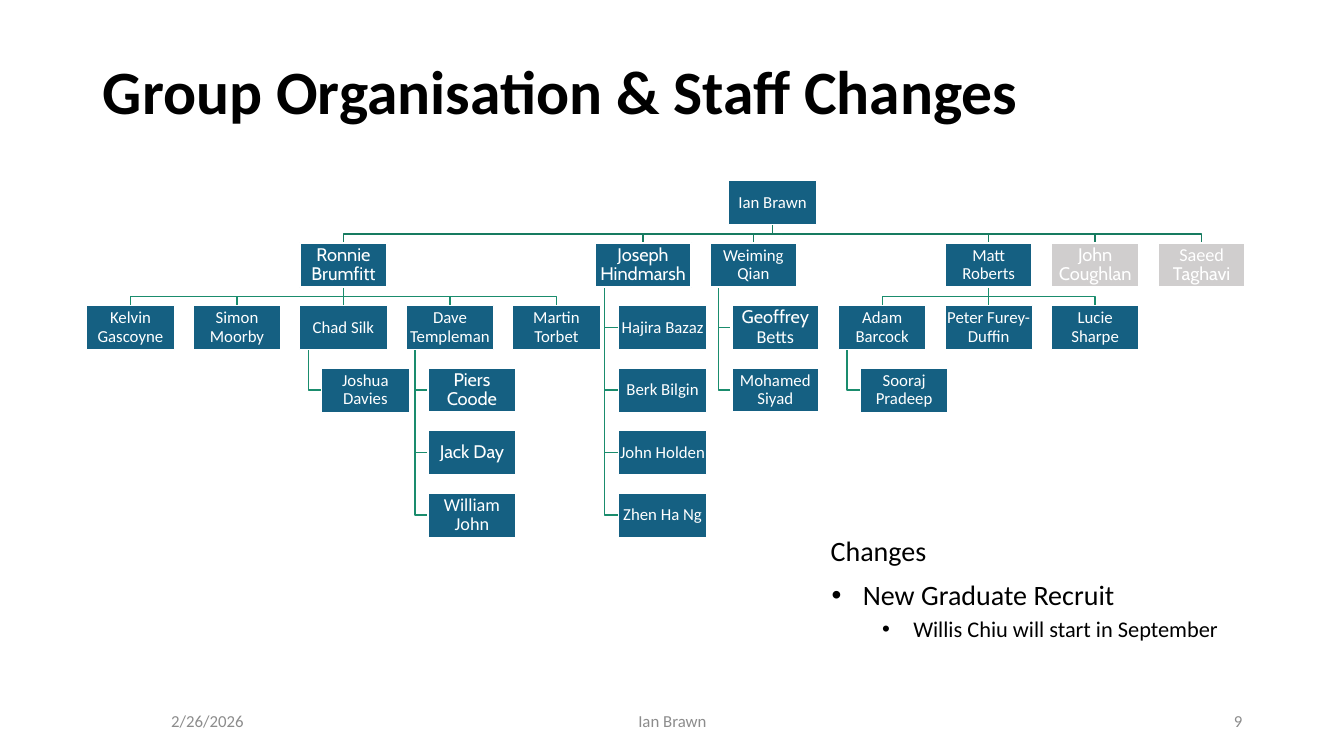
from lxml import etree
from pptx import Presentation, util as u
from pptx.dml.color import RGBColor
from pptx.enum import shapes, text
from pptx.oxml.ns import qn

LEFT, TOP = 0.86, 1.79
COL, ROW = 1.056, 0.62
BOX_W, BOX_H = 0.87, 0.44
WIDE = {"Joseph Hindmarsh": 0.96}
LEFT_STAFF = {"John Coughlan", "Saeed Taghavi"}
THICK_BORDER = {"Piers Coode", "Jack Day", "Geoffrey Betts", "Mohamed Siyad"}

# Name, manager, row, column; without a column the box hangs beside its manager's stem
STAFF = [
    ("Ian Brawn", None, 0, 6.03),
    ("Ronnie Brumfitt", "Ian Brawn", 1, 2),
    ("Kelvin Gascoyne", "Ronnie Brumfitt", 2, 0),
    ("Simon Moorby", "Ronnie Brumfitt", 2, 1),
    ("Chad Silk", "Ronnie Brumfitt", 2, 2),
    ("Joshua Davies", "Chad Silk", 3, None),
    ("Dave Templeman", "Ronnie Brumfitt", 2, 3),
    ("Piers Coode", "Dave Templeman", 3, None),
    ("Jack Day", "Dave Templeman", 4, None),
    ("William John", "Dave Templeman", 5, None),
    ("Martin Torbet", "Ronnie Brumfitt", 2, 4),
    ("Joseph Hindmarsh", "Ian Brawn", 1, 4.77),
    ("Hajira Bazaz", "Joseph Hindmarsh", 2, None),
    ("Berk Bilgin", "Joseph Hindmarsh", 3, None),
    ("John Holden", "Joseph Hindmarsh", 4, None),
    ("Zhen Ha Ng", "Joseph Hindmarsh", 5, None),
    ("Weiming Qian", "Ian Brawn", 1, 5.85),
    ("Geoffrey Betts", "Weiming Qian", 2, None),
    ("Mohamed Siyad", "Weiming Qian", 3, None),
    ("Matt Roberts", "Ian Brawn", 1, 8.06),
    ("Adam Barcock", "Matt Roberts", 2, 7.06),
    ("Sooraj Pradeep", "Adam Barcock", 3, None),
    ("Peter Furey-Duffin", "Matt Roberts", 2, 8.06),
    ("Lucie Sharpe", "Matt Roberts", 2, 9.06),
    ("John Coughlan", "Ian Brawn", 1, 9.06),
    ("Saeed Taghavi", "Ian Brawn", 1, 10.06),
]
# Boxes whose text is not 12 pt Calibri
RUNS = {name: [(name, "Cabin", 13)] for name in
        ("Ronnie Brumfitt", "Piers Coode", "Jack Day", "Joseph Hindmarsh", "John Coughlan")}
RUNS["William John"] = [("William John", "Calibri", 13)]
RUNS["Geoffrey Betts"] = [("Geoffrey", "Cabin", 13), (" Betts", "Calibri", 13)]
RUNS["Saeed Taghavi"] = [("Saeed ", "Calibri", 13), ("Taghavi", "Cabin", 13)]


def rgb(value):
    return RGBColor.from_string(value)


def add_run(p, words, size, color, font="Calibri", bold=False):
    r = p.add_run()
    r.text = words
    r.font.size = u.Pt(size)
    r.font.name = font
    r.font.bold = bold
    r.font.color.rgb = rgb(color)


prs = Presentation()
prs.slide_width, prs.slide_height = u.Inches(13.33), u.Inches(7.5)
s = prs.slides.add_slide(prs.slide_layouts[5])

title = s.shapes.title
title.left, title.top = u.Inches(0.92), u.Inches(0.4)
title.width, title.height = u.Inches(11.5), u.Inches(1.08)
tf = title.text_frame
tf.vertical_anchor = text.MSO_ANCHOR.MIDDLE
p = tf.paragraphs[0]
p.alignment = text.PP_ALIGN.LEFT
p.line_spacing = 0.9
add_run(p, "Group Organisation & Staff Changes", 44, "000000", bold=True)

# Staff boxes
boxes = {}
for name, manager, row, col in STAFF:
    if col is None:
        left = boxes[manager].left + boxes[manager].width // 4
    else:
        left = u.Inches(LEFT + col * COL)
    sp = s.shapes.add_shape(shapes.MSO_SHAPE.RECTANGLE, left, u.Inches(TOP + row * ROW),
                            u.Inches(WIDE.get(name, BOX_W)), u.Inches(BOX_H))
    sp.shadow.inherit = False
    sp.fill.solid()
    sp.fill.fore_color.rgb = rgb("D0CECE" if name in LEFT_STAFF else "156082")
    sp.line.color.rgb = rgb("FFFFFF")
    sp.line.width = u.Pt(1.5 if row == 1 or name in THICK_BORDER else 1)
    tf = sp.text_frame
    tf.word_wrap = True
    tf.vertical_anchor = text.MSO_ANCHOR.MIDDLE
    tf.margin_left = tf.margin_right = tf.margin_top = tf.margin_bottom = u.Inches(0.01)
    p = tf.paragraphs[0]
    p.alignment = text.PP_ALIGN.CENTER
    p.line_spacing = 0.9
    for words, font, size in RUNS.get(name, [(name, "Calibri", 12)]):
        add_run(p, words, size, "FFFFFF", font)
    boxes[name] = sp

# Reporting lines, placed behind the boxes
for name, manager, row, col in STAFF[1:]:
    boss, box = boxes[manager], boxes[name]
    bottom = boss.top + boss.height
    boss_mid, box_mid = boss.left + boss.width // 2, box.left + box.width // 2
    if col is not None and boss_mid == box_mid:
        link = s.shapes.add_connector(shapes.MSO_CONNECTOR.STRAIGHT,
                                      boss_mid, bottom, box_mid, box.top)
        link.begin_connect(boss, 2)
        link.end_connect(box, 0)
        etree.SubElement(link._element.spPr, qn("a:effectLst"))
    else:
        if col is None:
            stem, middle = boss.left + boss.width // 10, box.top + box.height // 2
            points = [(stem, middle), (box.left, middle)]
        else:
            stem, middle = boss_mid, (bottom + box.top) // 2
            points = [(stem, middle), (box_mid, middle), (box_mid, box.top)]
        outline = s.shapes.build_freeform(stem, bottom)
        outline.add_line_segments(points, close=False)
        link = outline.convert_to_shape()
        link.fill.background()
        link.shadow.inherit = False
    link.line.color.rgb = rgb("177B60" if row == 1 else "1A8C6D")
    link.line.width = u.Pt(1)
    s.shapes._spTree.insert(2, link._element)

# Changes: words, size, level, left margin, indent, space before
CHANGES = [
    ("Changes", 20, 0, 0.08, 0, 0),
    ("New Graduate Recruit", 20, 0, 0.4, -0.31, 10),
    ("Willis Chiu will start in September", 16, 1, 0.9, -0.31, 5),
]
tf = s.shapes.add_textbox(u.Inches(8.06), u.Inches(5.28), u.Inches(5.27), u.Inches(1.43)).text_frame
tf.word_wrap = True
for i, (words, size, level, margin, indent, before) in enumerate(CHANGES):
    p = tf.add_paragraph() if i else tf.paragraphs[0]
    p.level = level
    p.line_spacing = 0.9
    p.space_before = u.Pt(before)
    pPr = p._p.get_or_add_pPr()
    pPr.set("marL", str(u.Inches(margin)))
    pPr.set("indent", str(u.Inches(indent)))
    if indent:
        etree.SubElement(pPr, qn("a:buFont"), typeface="Arial")
        etree.SubElement(pPr, qn("a:buChar"), char="•")
    add_run(p, words, size, "000000")

# Footer
for words, left, width, align in [
    ("2/26/2026", 1.6, 2.32, text.PP_ALIGN.LEFT),
    ("Ian Brawn", 4.42, 4.5, text.PP_ALIGN.CENTER),
    ("9", 9.42, 3, text.PP_ALIGN.RIGHT),
]:
    tf = s.shapes.add_textbox(u.Inches(left), u.Inches(6.95), u.Inches(width), u.Inches(0.4)).text_frame
    tf.word_wrap = True
    tf.vertical_anchor = text.MSO_ANCHOR.MIDDLE
    p = tf.paragraphs[0]
    p.alignment = align
    add_run(p, words, 12, "8C8C8C")

prs.save("out.pptx")
